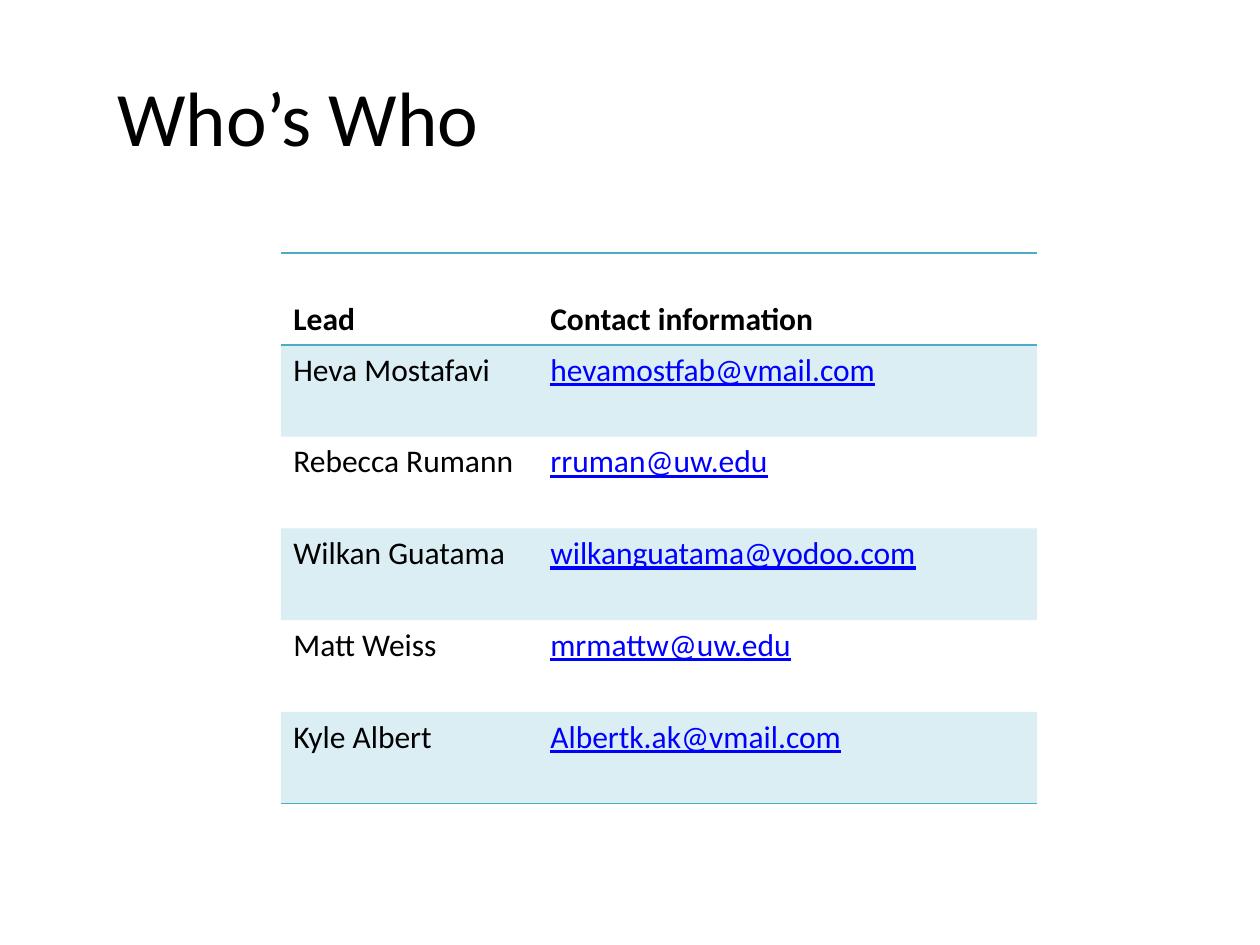
from pptx import Presentation
from pptx.dml.color import RGBColor
from pptx.enum.text import MSO_ANCHOR, PP_ALIGN
from pptx.oxml import parse_xml
from pptx.oxml.ns import nsdecls
from pptx.util import Cm, Pt
from lxml.etree import SubElement

BLACK = RGBColor(0x00, 0x00, 0x00)
LINK_BLUE = RGBColor(0x00, 0x00, 0xFF)
TEAL = RGBColor(0x4B, 0xAC, 0xC6)
FONT = "Calibri"
PLAIN_TABLE_STYLE = "{2D5ABB26-0587-4C30-8999-92F81FD0307C}"

CONTACTS = [
    ("Lead", "Contact information"),
    ("Heva Mostafavi", "hevamostfab@vmail.com"),
    ("Rebecca Rumann", "rruman@uw.edu"),
    ("Wilkan Guatama", "wilkanguatama@yodoo.com"),
    ("Matt Weiss", "mrmattw@uw.edu"),
    ("Kyle Albert", "Albertk.ak@vmail.com"),
]


def format_font(font, size, color, bold=False, underline=False):
    font.name = FONT
    font.size = Pt(size)
    font.color.rgb = color
    font.bold = bold
    font.underline = underline


def add_border(cell, side):
    """Draw a 1 pt teal line on side "T" or "B"; call before filling the cell."""
    cell._tc.get_or_add_tcPr().append(parse_xml(
        f'<a:ln{side} {nsdecls("a")} w="12700"><a:solidFill>'
        f'<a:srgbClr val="{TEAL}"/></a:solidFill></a:ln{side}>'))


def fill_band(cell):
    """Fill the cell with teal at 20 % opacity."""
    cell.fill.solid()
    cell.fill.fore_color.rgb = TEAL
    color = cell._tc.tcPr.find(".//{*}solidFill[last()]/{*}srgbClr")
    for solid in cell._tc.tcPr.findall("{*}solidFill"):
        color = solid[0]
    SubElement(color, color.tag.replace("srgbClr", "alpha"), val="20000")


def set_title(s, text, left, top, width, height):
    title = s.shapes.title
    title.left, title.top, title.width, title.height = left, top, width, height
    tf = title.text_frame
    tf.text = text
    tf.vertical_anchor = MSO_ANCHOR.MIDDLE
    p = tf.paragraphs[0]
    p.alignment = PP_ALIGN.LEFT
    format_font(p.runs[0].font, 44, BLACK)


def add_contact_table(s, rows, left, top, width, height):
    frame = s.shapes.add_table(len(rows), 2, left, top, width, height)
    table = frame.table
    table._tbl.tblPr.find("{*}tableStyleId").text = PLAIN_TABLE_STYLE
    table.columns[0].width = Cm(5.18)
    table.columns[1].width = width - Cm(5.18)
    last = len(rows) - 1
    for i, row in enumerate(rows):
        for j, text in enumerate(row):
            cell = table.cell(i, j)
            header = i == 0
            link = j == 1 and not header
            cell.text = text
            cell.vertical_anchor = MSO_ANCHOR.BOTTOM if header else MSO_ANCHOR.TOP
            format_font(cell.text_frame.paragraphs[0].runs[0].font, 18,
                        LINK_BLUE if link else BLACK, header, link)
            if header:
                add_border(cell, "T")
            if i in (0, last):
                add_border(cell, "B")
            if i % 2:
                fill_band(cell)
            else:
                cell.fill.background()


def main():
    prs = Presentation()
    prs.slide_width, prs.slide_height = Cm(25.4), Cm(19.05)
    s = prs.slides.add_slide(prs.slide_layouts[5])
    set_title(s, "Who’s Who", Cm(2.11), Cm(0.74), Cm(22.43), Cm(3.18))
    add_contact_table(s, CONTACTS, Cm(5.66), Cm(5.1), Cm(15.24), Cm(11.1))
    prs.save("out.pptx")


if __name__ == "__main__":
    main()
